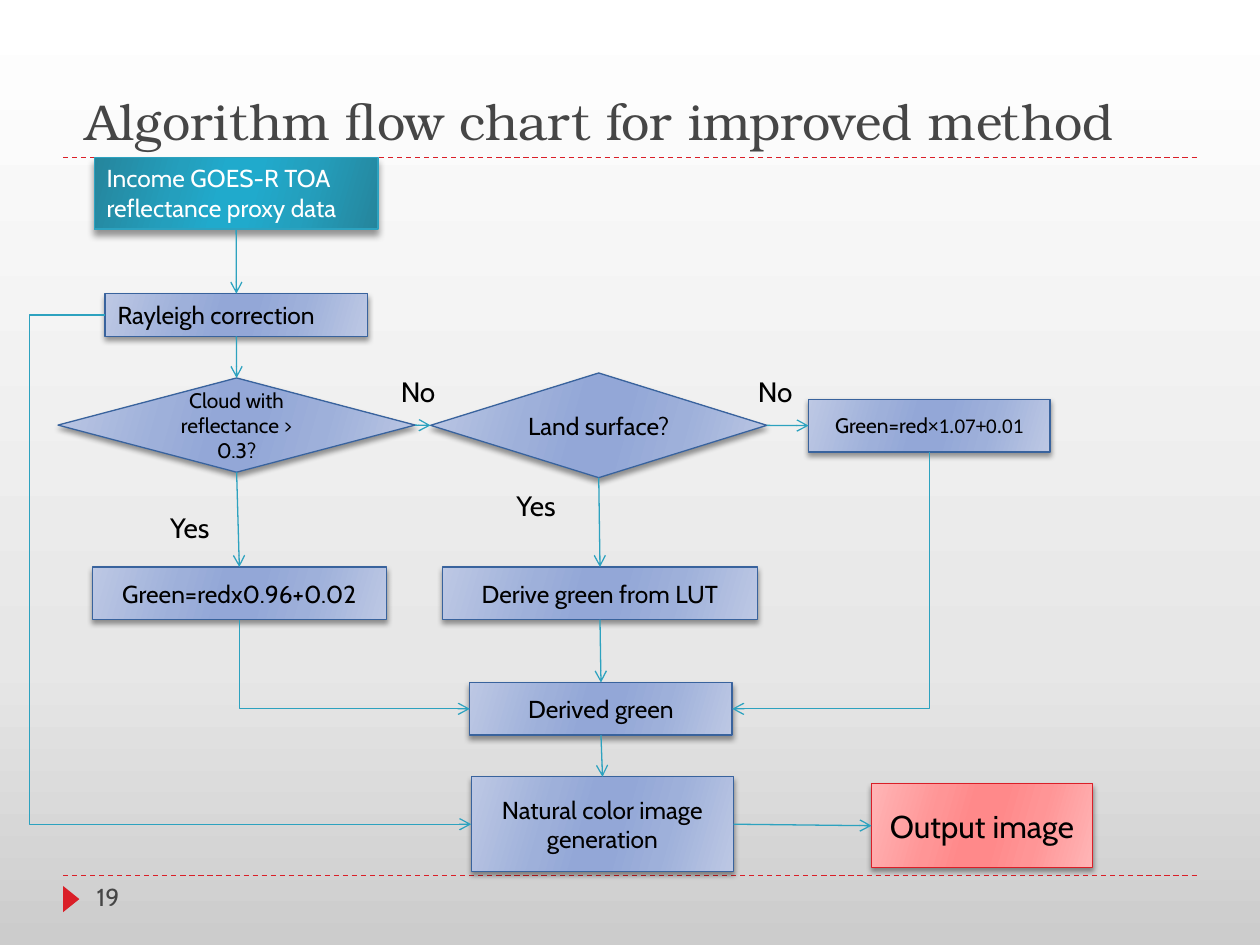
from dataclasses import dataclass

from lxml.etree import SubElement
from pptx import Presentation
from pptx.dml.color import RGBColor
from pptx.enum.dml import MSO_LINE
from pptx.enum.shapes import MSO_CONNECTOR, MSO_SHAPE
from pptx.enum.text import MSO_ANCHOR, MSO_AUTO_SIZE, PP_ALIGN
from pptx.oxml.ns import qn
from pptx.util import Cm, Pt

BODY_FONT = "Cabin"
TITLE_FONT = "TeX Gyre Bonum"
BLACK = RGBColor(0x00, 0x00, 0x00)
WHITE = RGBColor(0xFF, 0xFF, 0xFF)
GRAY = RGBColor(0x46, 0x46, 0x46)
RED = RGBColor(0xDA, 0x1F, 0x28)
TEAL = RGBColor(0x2D, 0xA2, 0xBF)
BLUE = RGBColor(0x39, 0x63, 0x9D)
BACKGROUND = [(0, RGBColor(0xCC, 0xCC, 0xCC)), (30, RGBColor(0xE7, 0xE7, 0xE7)), (100, WHITE)]
TOP, LEFT, BOTTOM, RIGHT = range(4)


@dataclass(frozen=True)
class Look:
    edge: RGBColor
    middle: RGBColor
    center: RGBColor
    line: RGBColor
    text: RGBColor = BLACK
    blur: float = 3
    distance: float = 2

    def stops(self) -> list[tuple[int, RGBColor]]:
        """Gradient that is symmetric about the center of the box."""
        colors = (self.edge, self.middle, self.center)
        return list(zip((0, 30, 45, 55, 73, 100), colors + colors[::-1]))


START = Look(RGBColor(0x25, 0x85, 0x9C), RGBColor(0x24, 0x9F, 0xBD),
             RGBColor(0x20, 0xAA, 0xCC), TEAL, WHITE, 4, 3.4)
STEP = Look(RGBColor(0xBD, 0xC8, 0xE4), RGBColor(0x9E, 0xB0, 0xDA),
            RGBColor(0x93, 0xA7, 0xD7), BLUE)
RESULT = Look(RGBColor(0xFF, 0xB5, 0xB6), RGBColor(0xFF, 0x95, 0x96),
              RGBColor(0xFF, 0x89, 0x8A), RED)


@dataclass(frozen=True)
class Node:
    name: str
    runs: tuple[str, ...]
    left: float
    top: float
    width: float
    height: float
    kind: MSO_SHAPE = MSO_SHAPE.FLOWCHART_PROCESS
    look: Look = STEP
    size: float = 14
    centered: bool = True


@dataclass(frozen=True)
class Label:
    text: str
    left: float
    top: float
    width: float
    height: float = 0.94
    size: float = 16
    color: RGBColor = BLACK


NODES = [
    Node("income", ("Income GOES-R TOA reflectance proxy data",), 1.9, 3.17, 5.72, 1.45,
         MSO_SHAPE.RECTANGLE, START, centered=False),
    Node("rayleigh", ("Rayleigh correction",), 2.12, 5.92, 5.29, 0.86,
         MSO_SHAPE.RECTANGLE, centered=False),
    Node("cloud", ("Cloud with reflectance > 0.3?",), 1.17, 7.62, 7.2, 1.9,
         MSO_SHAPE.FLOWCHART_DECISION, size=12),
    Node("land", ("Land surface?",), 8.68, 7.52, 6.78, 2.11, MSO_SHAPE.FLOWCHART_DECISION),
    Node("other green", ("Green=red", "×1.07+0.01"), 16.3, 8.05, 4.87, 1.06, size=12),
    Node("cloud green", ("Green=redx0.96+0.02",), 1.86, 11.43, 5.93, 1.06, MSO_SHAPE.RECTANGLE),
    Node("land green", ("Derive green from LUT",), 8.92, 11.43, 6.35, 1.06),
    Node("derived", ("Derived green",), 9.47, 13.76, 5.29, 1.06),
    Node("natural", ("Natural color image generation",), 9.5, 15.66, 5.29, 1.91),
    Node("output", ("Output image",), 17.57, 15.8, 4.45, 1.69, look=RESULT, size=18),
]
LABELS = [
    Label("No", 7.83, 7.42, 1.25),
    Label("No", 15.03, 7.42, 1.25),
    Label("Yes", 3.18, 10.16, 1.45),
    Label("Yes", 10.16, 9.73, 1.45),
    Label("19", 1.7, 17.65, 5.5, 1.02, 14, GRAY),
]
STRAIGHT_ARROWS = [
    ("income", BOTTOM, "rayleigh", TOP),
    ("rayleigh", BOTTOM, "cloud", TOP),
    ("cloud", RIGHT, "land", LEFT),
    ("cloud", BOTTOM, "cloud green", TOP),
    ("land", RIGHT, "other green", LEFT),
    ("land", BOTTOM, "land green", TOP),
    ("land green", BOTTOM, "derived", TOP),
    ("derived", BOTTOM, "natural", TOP),
    ("natural", RIGHT, "output", LEFT),
]


def set_gradient(owner, stops: list[tuple[int, RGBColor]], angle: int) -> None:
    owner.fill.gradient()
    gradient = owner._element.find(".//" + qn("a:gradFill"))
    for child in list(gradient):
        gradient.remove(child)
    stop_list = SubElement(gradient, qn("a:gsLst"))
    for position, color in stops:
        stop = SubElement(stop_list, qn("a:gs"), pos=str(position * 1000))
        SubElement(stop, qn("a:srgbClr"), val=str(color))
    SubElement(gradient, qn("a:lin"), ang=str(angle * 60000), scaled="0")


def add_shadow(shape, look: Look) -> None:
    shape.shadow.inherit = False
    effects = shape._element.spPr.find(qn("a:effectLst"))
    shadow = SubElement(effects, qn("a:outerShdw"), blurRad=str(Pt(look.blur)),
                        dist=str(Pt(look.distance)), dir="5400000", rotWithShape="0")
    color = SubElement(shadow, qn("a:srgbClr"), val=str(BLACK))
    SubElement(color, qn("a:alpha"), val="40000")


def add_node(slide, node: Node):
    shape = slide.shapes.add_shape(node.kind, Cm(node.left), Cm(node.top),
                                   Cm(node.width), Cm(node.height))
    set_gradient(shape, node.look.stops(), 16)
    shape.line.color.rgb = node.look.line
    shape.line.width = Pt(0.75)
    add_shadow(shape, node.look)
    frame = shape.text_frame
    frame.word_wrap = True
    frame.vertical_anchor = MSO_ANCHOR.MIDDLE if node.centered else MSO_ANCHOR.TOP
    paragraph = frame.paragraphs[0]
    paragraph.alignment = PP_ALIGN.CENTER if node.centered else PP_ALIGN.LEFT
    for text, font in zip(node.runs, (BODY_FONT, "Calibri")):
        run = paragraph.add_run()
        run.text = text
        run.font.name = font
    paragraph.font.size = Pt(node.size)
    paragraph.font.color.rgb = node.look.text
    return shape


def add_label(slide, label: Label) -> None:
    box = slide.shapes.add_textbox(Cm(label.left), Cm(label.top), Cm(label.width), Cm(label.height))
    box.text_frame.word_wrap = False
    paragraph = box.text_frame.paragraphs[0]
    paragraph.text = label.text
    paragraph.font.name = BODY_FONT
    paragraph.font.size = Pt(label.size)
    paragraph.font.color.rgb = label.color


def add_line(slide, kind: MSO_CONNECTOR, start: tuple[int, int], end: tuple[int, int],
             color: RGBColor = TEAL, arrow: bool = True):
    connector = slide.shapes.add_connector(kind, *start, *end)
    connector.line.color.rgb = color
    connector.line.width = Pt(0.75)
    if arrow:
        SubElement(connector._element.spPr.find(qn("a:ln")), qn("a:tailEnd"), type="arrow")
    else:
        connector.line.dash_style = MSO_LINE.DASH
    SubElement(connector._element.spPr, qn("a:effectLst"))
    return connector


def side_point(shape, side: int) -> tuple[int, int]:
    across, down = {TOP: (1, 0), LEFT: (0, 1), BOTTOM: (1, 2), RIGHT: (2, 1)}[side]
    return shape.left + shape.width * across // 2, shape.top + shape.height * down // 2


def add_corner_arrow(slide, start: tuple[int, int], end: tuple[int, int]) -> None:
    """Arrow that goes down from start, then sideways to end."""
    width, height = abs(end[1] - start[1]), abs(end[0] - start[0])
    left = (start[0] + end[0] - width) // 2
    top = (start[1] + end[1] - height) // 2
    connector = add_line(slide, MSO_CONNECTOR.ELBOW, (left, top), (left + width, top + height))
    properties = connector._element.spPr
    properties.find(qn("a:prstGeom")).set("prst", "bentConnector2")
    frame = properties.find(qn("a:xfrm"))
    goes_right = end[0] > start[0]
    frame.set("rot", str((270 if goes_right else 90) * 60000))
    if goes_right:
        frame.set("flipH", "1")


def main() -> None:
    presentation = Presentation()
    presentation.slide_width, presentation.slide_height = Cm(25.4), Cm(19.05)
    slide = presentation.slides.add_slide(presentation.slide_layouts[5])
    set_gradient_target = slide.background
    set_gradient_target.fill.solid()
    set_gradient(slide_background(slide), BACKGROUND, 270)

    # Dashed rules and page marker
    for height in (17.65, 3.17):
        add_line(slide, MSO_CONNECTOR.STRAIGHT, (Cm(1.27), Cm(height)),
                 (Cm(24.13), Cm(height)), RED, arrow=False)
    marker = slide.shapes.add_shape(MSO_SHAPE.ISOSCELES_TRIANGLE,
                                    Cm(1.17), Cm(17.96), Cm(0.53), Cm(0.33))
    marker.rotation = 90
    marker.shadow.inherit = False
    marker.fill.solid()
    marker.fill.fore_color.rgb = RED
    marker.line.fill.background()

    # Title
    title = slide.shapes.title
    title.left, title.top, title.width, title.height = Cm(1.47), Cm(0.43), Cm(22.86), Cm(2.74)
    title.text_frame.vertical_anchor = MSO_ANCHOR.BOTTOM
    title.text_frame.auto_size = MSO_AUTO_SIZE.NONE
    paragraph = title.text_frame.paragraphs[0]
    paragraph.text = "Algorithm flow chart for improved method"
    paragraph.alignment = PP_ALIGN.LEFT
    paragraph.font.name = TITLE_FONT
    paragraph.font.size = Pt(28.8)
    paragraph.font.color.rgb = GRAY

    # Flow chart
    shapes = {node.name: add_node(slide, node) for node in NODES}
    for source, source_side, target, target_side in STRAIGHT_ARROWS:
        begin, end = shapes[source], shapes[target]
        connector = add_line(slide, MSO_CONNECTOR.STRAIGHT, side_point(begin, source_side),
                             side_point(end, target_side))
        connector.begin_connect(begin, source_side)
        connector.end_connect(end, target_side)
    for source, side in (("cloud green", LEFT), ("other green", RIGHT)):
        add_corner_arrow(slide, side_point(shapes[source], BOTTOM),
                         side_point(shapes["derived"], side))
    bypass = add_line(slide, MSO_CONNECTOR.ELBOW, side_point(shapes["rayleigh"], LEFT),
                      side_point(shapes["natural"], LEFT))
    bypass_guides = bypass._element.spPr.find(qn("a:prstGeom")).find(qn("a:avLst"))
    SubElement(bypass_guides, qn("a:gd"), name="adj1", fmla="val -20600")

    # Branch labels and page number
    for label in LABELS:
        add_label(slide, label)
    presentation.save("out.pptx")


def slide_background(slide):
    return slide.background


if __name__ == "__main__":
    main()
